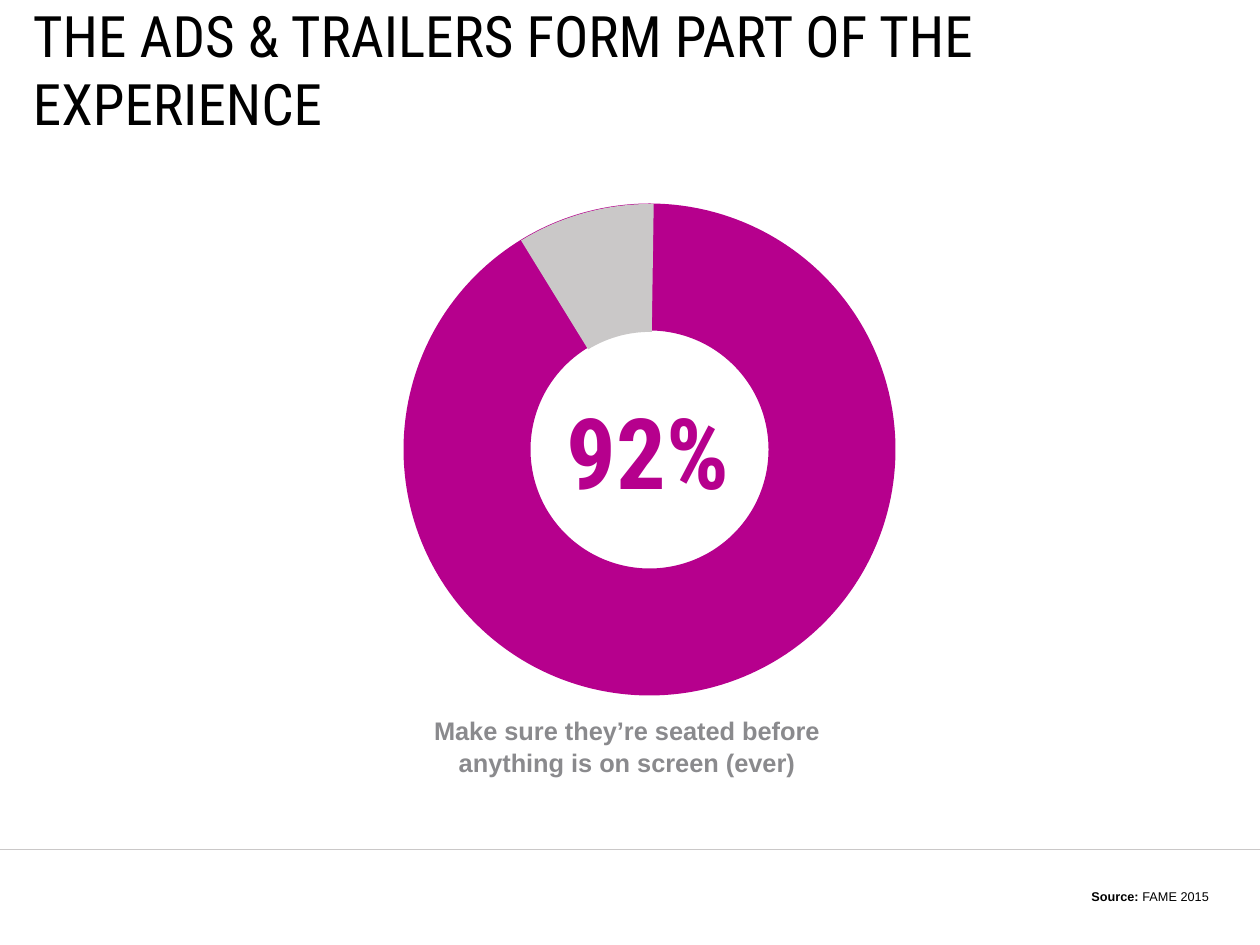
from pptx import Presentation
from pptx.dml.color import RGBColor
from pptx.enum.shapes import MSO_CONNECTOR, MSO_SHAPE
from pptx.enum.text import MSO_ANCHOR, PP_ALIGN
from pptx.oxml.ns import qn
from pptx.util import Pt
from lxml.etree import SubElement

PX = 8000
WIDTH, HEIGHT = 1260, 945
MAGENTA, GREY, CAPTION_GREY, BLACK = "B6008D", "CAC8C8", "8A8A8D", "000000"
HEADING_FONT, BODY_FONT = "Roboto Condensed", "Arial"


def px(*lengths):
    """Turn px lengths into EMU."""
    return [length * PX for length in lengths]


def paint(color_format, hex_color):
    """Set a colour from a hex string."""
    color_format.rgb = RGBColor.from_string(hex_color)


def style(run, font, size, color, bold):
    """Format one run of text."""
    run.font.name, run.font.size, run.font.bold = font, Pt(size), bold
    paint(run.font.color, color)


def add_text(slide, box, text, font, size, color, bold=False,
             align=PP_ALIGN.LEFT, anchor=MSO_ANCHOR.MIDDLE, inset=(11, 6)):
    """Add a one-paragraph text box and return its paragraph."""
    frame = slide.shapes.add_textbox(*px(*box)).text_frame
    frame.word_wrap = True
    frame.vertical_anchor = anchor
    frame.margin_left = frame.margin_right = inset[0] * PX
    frame.margin_top = frame.margin_bottom = inset[1] * PX
    frame.text = text
    paragraph = frame.paragraphs[0]
    paragraph.alignment = align
    for run in paragraph.runs:
        style(run, font, size, color, bold)
    return paragraph


def add_footer_rule(slide, top):
    """Draw the thin full-width line above the source."""
    rule = slide.shapes.add_connector(
        MSO_CONNECTOR.STRAIGHT, *px(0, top, WIDTH, top))
    rule.line.width = Pt(0.5)
    paint(rule.line.color, GREY)
    SubElement(rule._element.spPr, qn("a:effectLst"))


def add_ring(slide, box, thickness):
    """Draw the full ring as a thick unfilled circle."""
    ring = slide.shapes.add_shape(MSO_SHAPE.OVAL, *px(*box))
    ring.shadow.inherit = False
    ring.fill.background()
    ring.line.width = Pt(thickness)
    paint(ring.line.color, MAGENTA)


def add_remainder(slide, box, angles, thickness):
    """Cover the remaining share of the ring with a grey arc."""
    arc = slide.shapes.add_shape(MSO_SHAPE.BLOCK_ARC, *px(*box))
    arc.shadow.inherit = False
    for index, degrees in enumerate(angles):
        arc.adjustments[index] = degrees * 0.6
    arc.adjustments[2] = thickness
    arc.fill.solid()
    paint(arc.fill.fore_color, GREY)
    arc.line.fill.background()


def add_source(slide, box, label, source):
    """Add the source line with its bold label."""
    paragraph = add_text(slide, box, label, BODY_FONT, 8, BLACK, True,
                         PP_ALIGN.RIGHT, MSO_ANCHOR.BOTTOM)
    citation = paragraph.add_run()
    citation.text = source
    style(citation, BODY_FONT, 8, BLACK, False)


def main():
    """Build and save the slide."""
    deck = Presentation()
    deck.slide_width, deck.slide_height = px(WIDTH, HEIGHT)
    slide = deck.slides.add_slide(deck.slide_layouts[6])

    add_footer_rule(slide, 849)
    add_text(slide, (33, 43, 1164, 51),
             "THE ADS & TRAILERS FORM PART OF THE EXPERIENCE",
             HEADING_FONT, 36, BLACK, inset=(0, 0))
    caption = add_text(
        slide, (263, 708, 735, 75),
        "Make sure they’re seated before \vanything is on screen (ever) ",
        BODY_FONT, 16, CAPTION_GREY, True, PP_ALIGN.CENTER)
    caption.line_spacing = Pt(20)
    add_source(slide, (549, 883, 671, 27), "Source: ", "FAME 2015")
    add_ring(slide, (467, 267, 365, 365), 80)
    add_remainder(slide, (404, 204, 492, 492), (238.39, 270.87), 0.26)
    add_text(slide, (521, 385, 254, 130), "92%", HEADING_FONT, 62,
             MAGENTA, True, PP_ALIGN.CENTER)

    deck.save("out.pptx")


if __name__ == "__main__":
    main()
